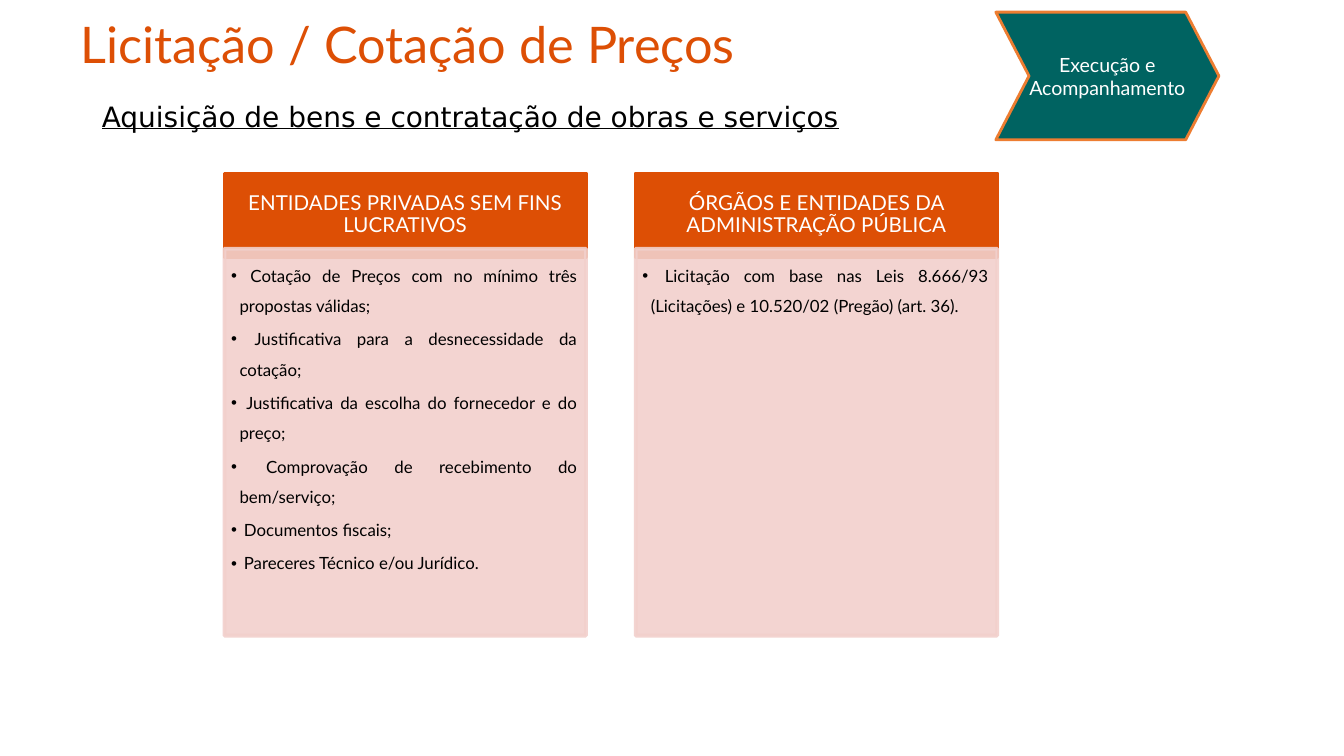
from lxml import etree
from pptx import Presentation
from pptx import util as u
from pptx.dml.color import RGBColor
from pptx.enum import shapes, text
from pptx.oxml.ns import qn

ORANGE, PINK, TEAL, EDGE = "DD4F05", "F2D0CC", "006361", "ED7D31"
WHITE, BLACK = "FFFFFF", "000000"
PANEL_LEFT, PANEL_STEP, PANEL_W = 120.24, 220.32, 193.68
PANELS = [
    ("ENTIDADES PRIVADAS SEM FINS LUCRATIVOS", [
        "Cotação de Preços com no mínimo três propostas válidas;",
        "Justificativa para a desnecessidade da cotação;",
        "Justificativa da escolha do fornecedor e do preço;",
        "Comprovação de recebimento do bem/serviço;",
        "Documentos fiscais;",
        "Pareceres Técnico e/ou Jurídico."]),
    ("ÓRGÃOS E ENTIDADES DA ADMINISTRAÇÃO PÚBLICA", [
        "Licitação com base nas Leis 8.666/93 (Licitações) e 10.520/02 "
        "(Pregão) (art. 36)."]),
]


def rgb(value):
    return RGBColor.from_string(value)


def place(sp, left, top, width, height):
    sp.left, sp.top = u.Pt(left), u.Pt(top)
    sp.width, sp.height = u.Pt(width), u.Pt(height)


def paint(sp, fill, line, weight, alpha=None):
    sp.fill.solid()
    sp.fill.fore_color.rgb = rgb(fill)
    sp.line.color.rgb = rgb(line)
    sp.line.width = u.Pt(weight)
    if alpha:
        for clr in sp._element.spPr.iter(qn("a:srgbClr")):
            etree.SubElement(clr, qn("a:alpha"), val=str(alpha * 1000))


def frame(sp, anchor, left, top, right, bottom):
    tf = sp.text_frame
    tf.word_wrap = True
    tf.auto_size = text.MSO_AUTO_SIZE.NONE
    tf.vertical_anchor = anchor
    tf.margin_left, tf.margin_top = u.Pt(left), u.Pt(top)
    tf.margin_right, tf.margin_bottom = u.Pt(right), u.Pt(bottom)
    return tf


def style(p, size, color, align, spacing=1.0, font="Lato", underline=False):
    p.alignment = align
    p.line_spacing = spacing
    p.space_before = u.Pt(0)
    for r in p.runs:
        r.font.name, r.font.size = font, u.Pt(size)
        r.font.bold, r.font.underline = False, underline
        r.font.color.rgb = rgb(color)


def bullet(p):
    pPr = p._p.get_or_add_pPr()
    pPr.set("marL", str(u.Pt(4.5)))
    pPr.set("indent", str(u.Pt(-4.5)))
    clr = etree.SubElement(pPr, qn("a:buClr"))
    etree.SubElement(clr, qn("a:srgbClr"), val=BLACK)
    etree.SubElement(pPr, qn("a:buFont"), typeface="Arial")
    etree.SubElement(pPr, qn("a:buChar"), char="•")


def add_panel(head, body, left, heading, items):
    # Heading bar
    place(head, left, 92.88, PANEL_W, 44.64)
    paint(head, ORANGE, ORANGE, 2)
    tf = frame(head, text.MSO_ANCHOR.MIDDLE, 6.5, 3.6, 6.5, 3.6)
    tf.text = heading
    style(tf.paragraphs[0], 11, WHITE, text.PP_ALIGN.CENTER, 0.9)

    # Bulleted list, slightly transparent over the bar
    place(body, left, 133.2, PANEL_W, 207.36)
    paint(body, PINK, PINK, 2, alpha=90)
    tf = frame(body, text.MSO_ANCHOR.TOP, 3.6, 3.6, 5, 5.8)
    tf.text = "\n".join(" " + item for item in items)
    for p in tf.paragraphs:
        p.level = 1
        bullet(p)
        style(p, 9, BLACK, text.PP_ALIGN.JUSTIFY, 1.5)
        p.space_after = u.Pt(1.6)


def add_title(sp, wording):
    place(sp, 36, 7.2, 648, 46)
    tf = frame(sp, text.MSO_ANCHOR.TOP, 7.2, 0, 7.2, 0)
    tf.text = wording
    style(tf.paragraphs[0], 27, ORANGE, text.PP_ALIGN.LEFT)


def add_subtitle(s, wording):
    sp = s.shapes.add_textbox(u.Pt(47.5), u.Pt(49.7), u.Pt(510), u.Pt(25))
    tf = frame(sp, text.MSO_ANCHOR.TOP, 7.2, 3.6, 7.2, 3.6)
    tf.text = wording
    style(tf.paragraphs[0], 15, BLACK, text.PP_ALIGN.LEFT,
          font="DejaVu Sans", underline=True)


def add_stage(s, wording):
    sp = s.shapes.add_shape(shapes.MSO_SHAPE.CHEVRON, u.Pt(533.5), u.Pt(6.5),
                            u.Pt(119.5), u.Pt(68.4))
    sp.adjustments[0] = 0.26
    sp.shadow.inherit = False
    paint(sp, TEAL, EDGE, 1.5)
    tf = frame(sp, text.MSO_ANCHOR.MIDDLE, 0, 3.6, 0, 3.6)
    tf.text = wording
    style(tf.paragraphs[0], 10.5, WHITE, text.PP_ALIGN.CENTER)


def main():
    prs = Presentation()
    prs.slide_width, prs.slide_height = u.Pt(720), u.Pt(405)
    # Comparison layout: title, then a heading and a list per column
    s = prs.slides.add_slide(prs.slide_layouts[4])
    title, *parts = list(s.placeholders)[:5]

    add_title(title, "Licitação / Cotação de Preços")
    add_subtitle(s, "Aquisição de bens e contratação de obras e serviços")
    for i, (heading, items) in enumerate(PANELS):
        add_panel(parts[2 * i], parts[2 * i + 1],
                  PANEL_LEFT + i * PANEL_STEP, heading, items)
    add_stage(s, "Execução e Acompanhamento")
    prs.save("out.pptx")


if __name__ == "__main__":
    main()
